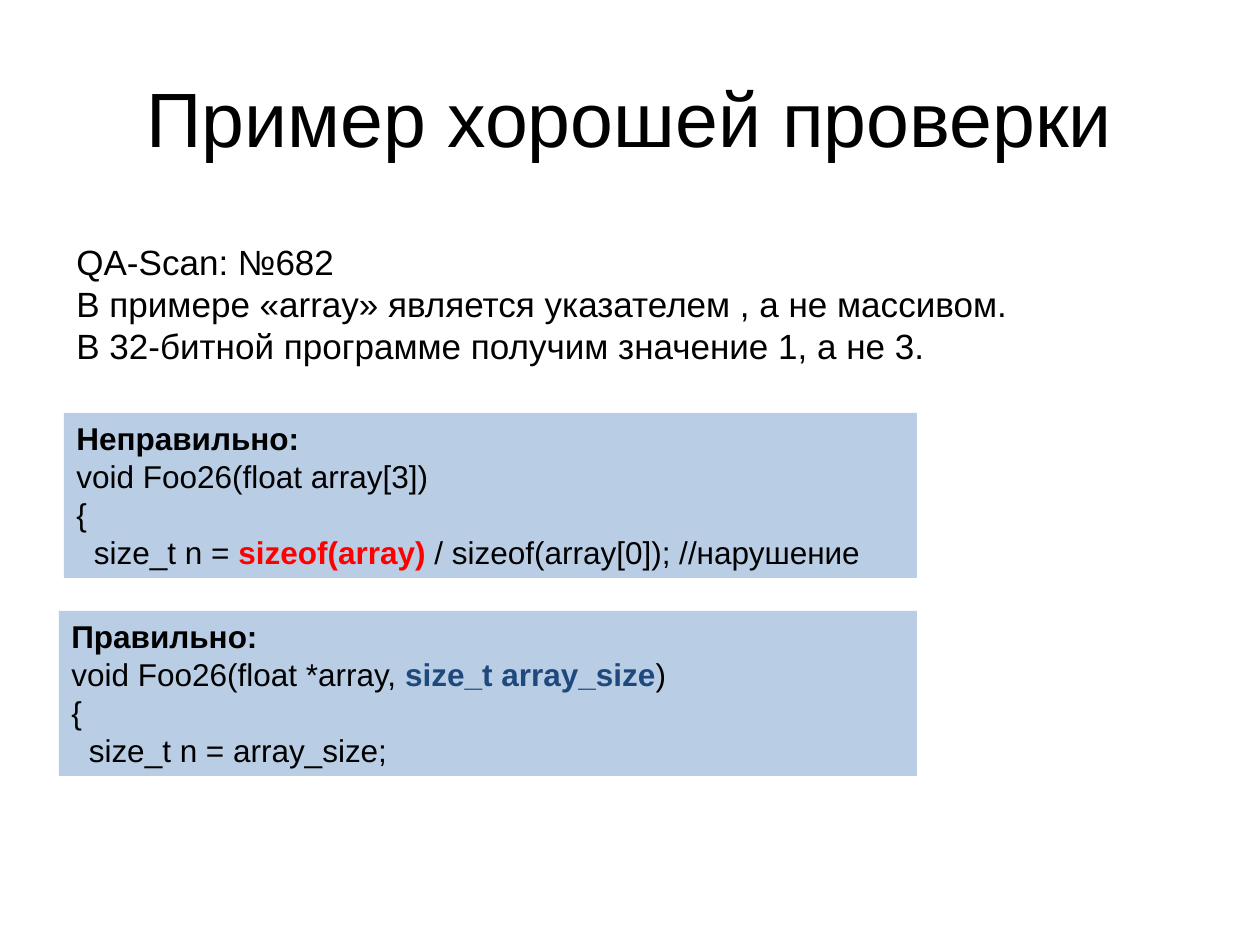
from pptx import Presentation
from pptx import util as u
from pptx.dml.color import RGBColor
from pptx.enum import shapes, text

PX_PER_INCH = 126
BLACK = RGBColor(0x00, 0x00, 0x00)
RED = RGBColor(0xFF, 0x00, 0x00)
NAVY = RGBColor(0x1F, 0x49, 0x7D)
PALE_BLUE = RGBColor(0xB9, 0xCD, 0xE5)

PLAIN = {"bold": False, "color": BLACK}
HEADING = {"bold": True, "color": BLACK}
ERROR = {"bold": True, "color": RED}
FIX = {"bold": True, "color": NAVY}

NOTES = [
    [("QA-Scan: №682", PLAIN)],
    [("В примере «array» является указателем , а не массивом.", PLAIN)],
    [("В 32-битной программе получим значение 1, а не 3.", PLAIN)],
]
WRONG_CODE = [
    [("Неправильно:", HEADING)],
    [("void Foo26(float array[3])", PLAIN)],
    [("{", PLAIN)],
    [("  size_t n = ", PLAIN), ("sizeof(array)", ERROR),
     (" / sizeof(array[0]); //нарушение", PLAIN)],
]
RIGHT_CODE = [
    [("Правильно:", HEADING)],
    [("void Foo26(float *array, ", PLAIN), ("size_t array_size", FIX), (")", PLAIN)],
    [("{", PLAIN)],
    [("  size_t n = array_size;", PLAIN)],
]


def px(value):
    return u.Emu(round(value * u.Inches(1) / PX_PER_INCH))


def write_lines(shape, lines, size, align=text.PP_ALIGN.LEFT,
                anchor=text.MSO_ANCHOR.TOP):
    """Fill a shape with paragraphs, each a list of (wording, style) runs."""
    frame = shape.text_frame
    frame.word_wrap = True
    frame.vertical_anchor = anchor
    for index, line in enumerate(lines):
        paragraph = frame.paragraphs[0] if index == 0 else frame.add_paragraph()
        paragraph.alignment = align
        for wording, style in line:
            run = paragraph.add_run()
            run.text = wording
            font_values = {"name": "Arial", "size": u.Pt(size), "bold": style["bold"]}
            for name, value in font_values.items():
                setattr(run.font, name, value)
            run.font.color.rgb = style["color"]


def add_text(slide, box, lines, size, **layout):
    shape = slide.shapes.add_textbox(*map(px, box))
    write_lines(shape, lines, size, **layout)


def add_code_panel(slide, box, lines):
    shape = slide.shapes.add_shape(shapes.MSO_SHAPE.RECTANGLE, *map(px, box))
    shape.shadow.inherit = False
    shape.fill.solid()
    shape.fill.fore_color.rgb = PALE_BLUE
    shape.line.fill.background()
    write_lines(shape, lines, 18)


def main():
    presentation = Presentation()
    presentation.slide_width = px(1260)
    presentation.slide_height = px(945)
    slide = presentation.slides.add_slide(presentation.slide_layouts[6])

    add_text(slide, (63, 38, 1134, 157), [[("Пример хорошей проверки", PLAIN)]], 44,
             align=text.PP_ALIGN.CENTER, anchor=text.MSO_ANCHOR.MIDDLE)
    add_text(slide, (64, 234, 1071, 140), NOTES, 20)
    add_code_panel(slide, (64, 413, 853, 165), WRONG_CODE)
    add_code_panel(slide, (59, 611, 858, 165), RIGHT_CODE)

    presentation.save("out.pptx")


if __name__ == "__main__":
    main()
